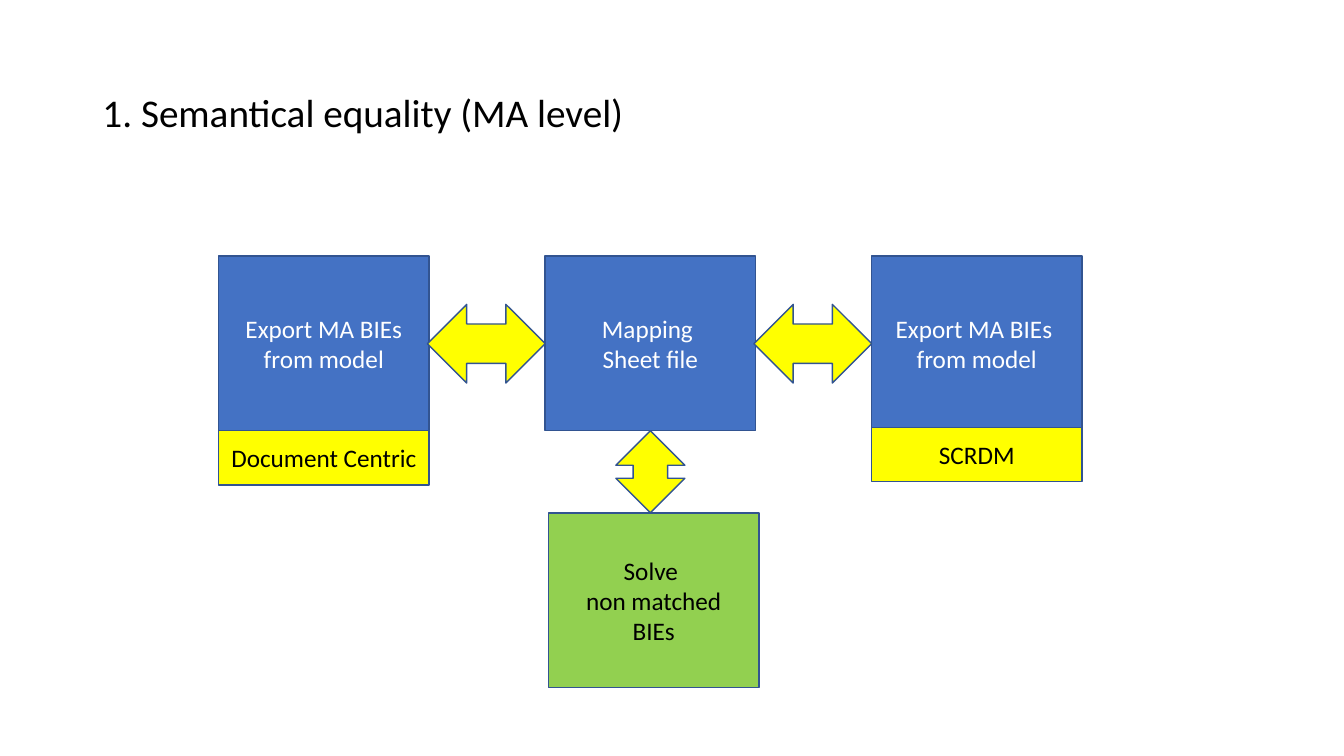
from pptx import Presentation
from pptx.dml.color import RGBColor
from pptx.enum import shapes, text
from pptx.util import Pt

COLORS = {
    "blue": "4472C4",
    "outline": "325491",
    "yellow": "FFFF00",
    "green": "92D050",
    "white": "FFFFFF",
    "black": "000000",
}
KINDS = shapes.MSO_SHAPE


def format_text(frame, size, color, align):
    frame.word_wrap = True
    frame.vertical_anchor = text.MSO_ANCHOR.MIDDLE
    for paragraph in frame.paragraphs:
        paragraph.alignment = align
        for run in paragraph.runs:
            run.font.name = "Calibri"
            run.font.size = Pt(size)
            run.font.color.rgb = RGBColor.from_string(COLORS[color])


def add_part(kind, left, top, width, height, fill, wording="", color="black"):
    part = slide.shapes.add_shape(kind, Pt(left), Pt(top), Pt(width), Pt(height))
    part.shadow.inherit = False
    part.fill.solid()
    part.fill.fore_color.rgb = RGBColor.from_string(COLORS[fill])
    part.line.color.rgb = RGBColor.from_string(COLORS["outline"])
    part.line.width = Pt(1)
    if wording:
        part.text_frame.text = wording
        format_text(part.text_frame, 18, color, text.PP_ALIGN.CENTER)


presentation = Presentation()
presentation.slide_width = Pt(960)
presentation.slide_height = Pt(540)
slide = presentation.slides.add_slide(presentation.slide_layouts[5])

heading = slide.shapes.title
heading.left, heading.top = Pt(66), Pt(29.5)
heading.width, heading.height = Pt(828), Pt(104.4)
heading.text_frame.text = "1. Semantical equality (MA level)"
heading.text_frame.auto_size = text.MSO_AUTO_SIZE.NONE
heading.text_frame.paragraphs[0].line_spacing = 0.9
format_text(heading.text_frame, 28, "black", text.PP_ALIGN.LEFT)

box_width, box_height = 150.3, 124.8
first_left, column_step, row_top = 156.2, 233.2, 182.9
row_bottom = row_top + box_height

steps = ["Export MA BIEs from model", "Mapping \nSheet file", "Export MA BIEs \nfrom model"]
for column, step in enumerate(steps):
    add_part(KINDS.RECTANGLE, first_left + column * column_step, row_top,
             box_width, box_height, "blue", step, "white")

add_part(KINDS.UP_DOWN_ARROW, 439.9, row_bottom, 49.3, 58.6, "yellow")
for gap in range(2):
    add_part(KINDS.LEFT_RIGHT_ARROW, 305.3 + gap * column_step, 217.4, 84.2, 56.2, "yellow")

for column, label_top, model in [(0, row_bottom, "Document Centric"), (2, 305.3, "SCRDM")]:
    add_part(KINDS.RECTANGLE, first_left + column * column_step, label_top,
             box_width, 38.7, "yellow", model)

add_part(KINDS.RECTANGLE, 391.8, 366.5, box_width, box_height, "green",
         "Solve \nnon matched\nBIEs")

presentation.save("out.pptx")
